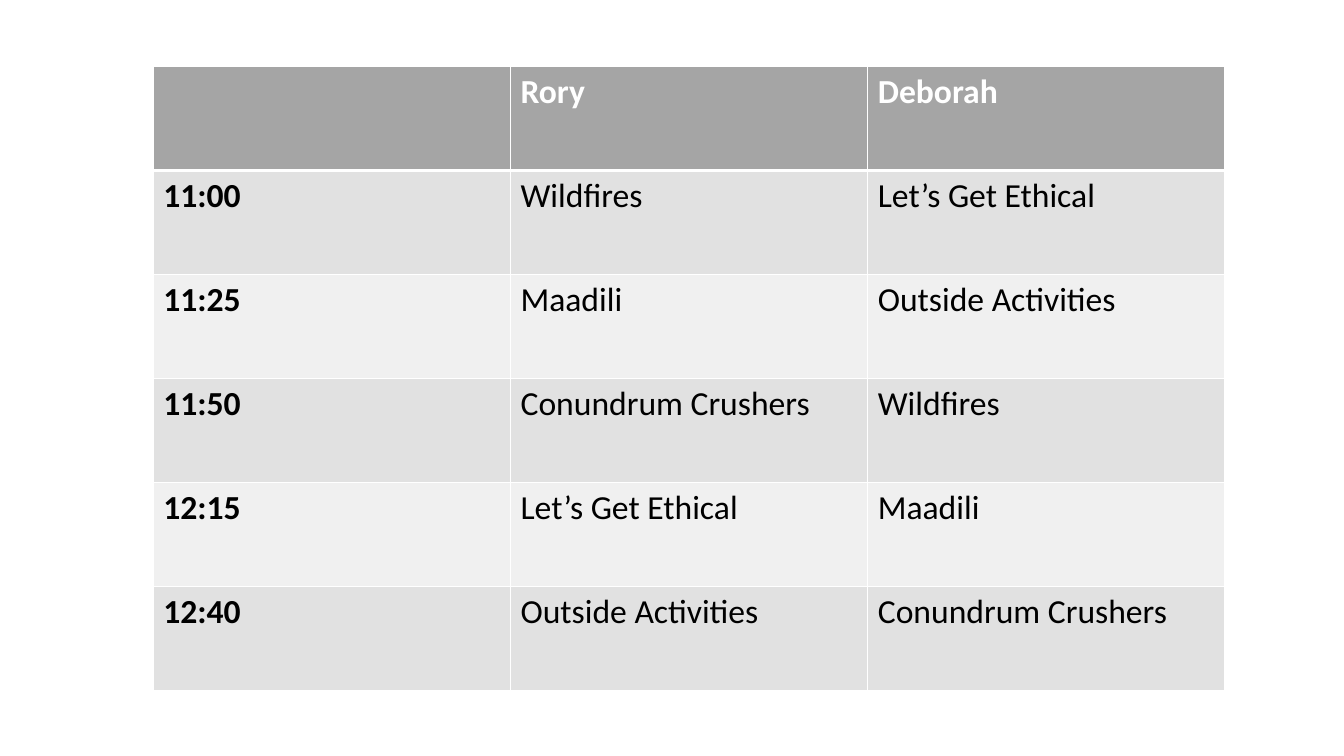
from lxml.etree import SubElement
from pptx import Presentation
from pptx.dml.color import RGBColor
from pptx.oxml.ns import qn
from pptx.util import Inches, Pt

WHITE = RGBColor(0xFF, 0xFF, 0xFF)
BLACK = RGBColor(0x00, 0x00, 0x00)
HEADER_GRAY = RGBColor(0xA5, 0xA5, 0xA5)
DARK_BAND = RGBColor(0xE1, 0xE1, 0xE1)
LIGHT_BAND = RGBColor(0xF0, 0xF0, 0xF0)

SCHEDULE = [
    ("", "Rory", "Deborah"),
    ("11:00", "Wildfires", "Let’s Get Ethical"),
    ("11:25", "Maadili", "Outside Activities"),
    ("11:50", "Conundrum Crushers", "Wildfires"),
    ("12:15", "Let’s Get Ethical", "Maadili"),
    ("12:40", "Outside Activities", "Conundrum Crushers"),
]


def set_borders(cell, top, bottom):
    """Draw white borders; top and bottom are widths in points."""
    properties = cell._tc.get_or_add_tcPr()
    for side, width in (("L", 1), ("R", 1), ("T", top), ("B", bottom)):
        line = SubElement(properties, qn(f"a:ln{side}"), w=str(Pt(width)))
        fill = SubElement(line, qn("a:solidFill"))
        SubElement(fill, qn("a:srgbClr"), val=str(WHITE))


def format_cell(cell, text, row, column):
    is_header = row == 0
    set_borders(cell, top=3 if row == 1 else 1, bottom=3 if is_header else 1)
    cell.fill.solid()
    band = DARK_BAND if row % 2 else LIGHT_BAND
    cell.fill.fore_color.rgb = HEADER_GRAY if is_header else band
    cell.text = text
    font = cell.text_frame.paragraphs[0].font
    font.name = "Calibri"
    font.size = Pt(24)
    font.bold = is_header or column == 0
    font.color.rgb = WHITE if is_header else BLACK


def add_schedule(slide, left, top, width, height):
    frame = slide.shapes.add_table(
        len(SCHEDULE), len(SCHEDULE[0]), left, top, width, height
    )
    for row, texts in enumerate(SCHEDULE):
        for column, text in enumerate(texts):
            format_cell(frame.table.cell(row, column), text, row, column)


def main():
    presentation = Presentation()
    presentation.slide_width = Inches(13.33)
    presentation.slide_height = Inches(7.5)
    blank_layout = presentation.slide_layouts[6]
    slide = presentation.slides.add_slide(blank_layout)
    add_schedule(slide, Inches(1.52), Inches(0.66), Inches(10.63), Inches(6.19))
    presentation.save("out.pptx")


if __name__ == "__main__":
    main()
